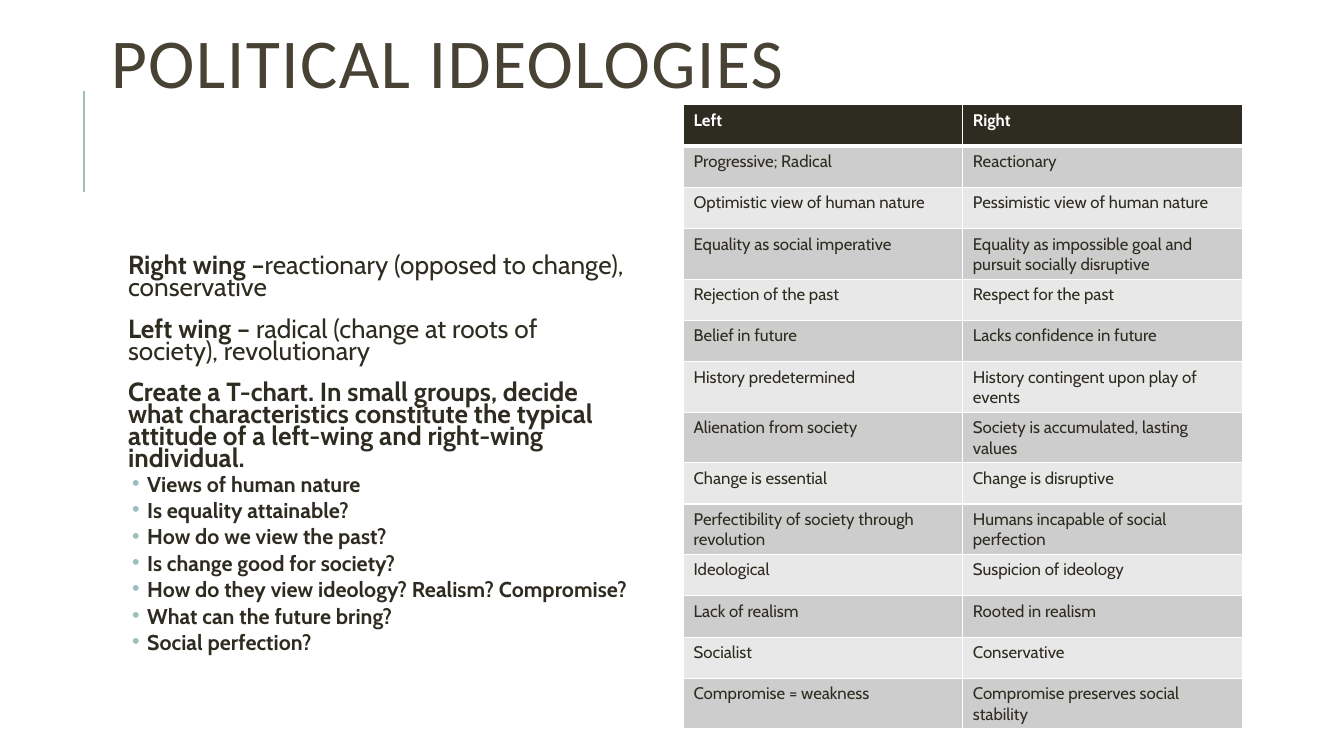
from dataclasses import dataclass

from lxml.etree import SubElement
from pptx import Presentation
from pptx.dml.color import RGBColor
from pptx.enum.shapes import MSO_CONNECTOR as Connector
from pptx.enum.text import MSO_ANCHOR as Anchor
from pptx.oxml import parse_xml
from pptx.oxml.ns import nsdecls, qn
from pptx.util import Inches, Pt


@dataclass(frozen=True)
class Theme:
    heading_font: str = "Calibri"
    body_font: str = "Cabin"
    heading: str = "474233"
    ink: str = "2E2B21"
    accent: str = "9CBEBD"
    white: str = "FFFFFF"
    bands: tuple = ("CDCDCD", "E8E8E8")
    title_size: float = 50
    lead_size: float = 18.7
    bullet_size: float = 15.3
    table_size: float = 12


LEADS = [
    [("Right wing –", True), ("reactionary (opposed to change), conservative", False)],
    [("Left wing – ", True), ("radical (change at roots of society), revolutionary", False)],
    [("Create a T-chart. In small groups, decide what characteristics constitute "
      "the typical attitude of a left-wing and right-wing individual.", True)],
]
QUESTIONS = [
    "Views of human nature",
    "Is equality attainable?",
    "How do we view the past?",
    "Is change good for society?",
    "How do they view ideology? Realism? Compromise?",
    "What can the future bring?",
    "Social perfection?",
]
ATTITUDES = [
    ("Left", "Right"),
    ("Progressive; Radical", "Reactionary"),
    ("Optimistic view of human nature", "Pessimistic view of human nature"),
    ("Equality as social imperative",
     "Equality as impossible goal and pursuit socially disruptive"),
    ("Rejection of the past", "Respect for the past"),
    ("Belief in future", "Lacks confidence in future"),
    ("History predetermined", "History contingent upon play of events"),
    ("Alienation from society", "Society is accumulated, lasting values"),
    ("Change is essential", "Change is disruptive"),
    ("Perfectibility of society through revolution",
     "Humans incapable of social perfection"),
    ("Ideological", "Suspicion of ideology"),
    ("Lack of realism", "Rooted in realism"),
    ("Socialist", "Conservative"),
    ("Compromise = weakness", "Compromise preserves social stability"),
]


class SlideBuilder:
    def __init__(self, slide, theme):
        self.slide = slide
        self.theme = theme

    def add_run(self, paragraph, text, size, color, font=None, bold=False):
        run = paragraph.add_run()
        run.text = text
        run.font.name = font or self.theme.body_font
        run.font.size = Pt(size)
        run.font.bold = bold
        run.font.color.rgb = RGBColor.from_string(color)
        return run

    def text_frame(self, left, top, width, height):
        box = self.slide.shapes.add_textbox(*map(Inches, (left, top, width, height)))
        box.text_frame.word_wrap = True
        return box.text_frame

    def accent_line(self, x, start, end):
        rule = self.slide.shapes.add_connector(
            Connector.STRAIGHT, Inches(x), Inches(start), Inches(x), Inches(end))
        rule.line.color.rgb = RGBColor.from_string(self.theme.accent)
        rule.line.width = Pt(1.5)
        SubElement(rule._element.spPr, qn("a:effectLst"))

    def title(self, text):
        frame = self.text_frame(1, 0.15, 11.32, 1.06)
        frame.vertical_anchor = Anchor.MIDDLE
        heading = frame.paragraphs[0]
        heading.line_spacing = 0.8
        run = self.add_run(heading, text, self.theme.title_size,
                           self.theme.heading, self.theme.heading_font)
        run.font._element.set("spc", "100")

    def discussion(self, leads, questions):
        frame = self.text_frame(1.12, 2.5, 5.2, 4.4)
        frame.margin_left = frame.margin_right = Inches(0.05)
        frame.margin_top = frame.margin_bottom = Inches(0.05)
        entries = [(lead, False) for lead in leads]
        entries += [([(question, True)], True) for question in questions]
        for index, (runs, bulleted) in enumerate(entries):
            paragraph = frame.add_paragraph() if index else frame.paragraphs[0]
            paragraph.line_spacing = 0.7
            paragraph.space_before = Pt(2 if bulleted else 12)
            paragraph.space_after = Pt(4 if bulleted else 2)
            size = self.theme.bullet_size if bulleted else self.theme.lead_size
            for text, bold in runs:
                self.add_run(paragraph, text, size, self.theme.ink, bold=bold)
            if bulleted:
                paragraph.level = 1
                self.bullet(paragraph)
            else:
                paragraph._p.get_or_add_pPr().set("marL", str(Inches(0.1)))

    def bullet(self, paragraph):
        props = paragraph._p.get_or_add_pPr()
        props.set("marL", str(Inches(0.29)))
        props.set("indent", str(Inches(-0.15)))
        color = SubElement(props, qn("a:buClr"))
        SubElement(color, qn("a:srgbClr"), val=self.theme.accent)
        SubElement(props, qn("a:buFont"), typeface="Arial")
        SubElement(props, qn("a:buChar"), char="•")

    def borders(self, cell, bottom):
        """Draw one-point white borders, with the given bottom width in points."""
        props = cell._tc.get_or_add_tcPr()
        widths = {"lnL": 1, "lnR": 1, "lnT": 1, "lnB": bottom}
        for position, (side, width) in enumerate(widths.items()):
            props.insert(position, parse_xml(
                f'<a:{side} {nsdecls("a")} w="{Pt(width)}"><a:solidFill>'
                f'<a:srgbClr val="{self.theme.white}"/></a:solidFill></a:{side}>'))

    def table(self, rows):
        column_width, row_height = 2.77, 0.41
        columns = len(rows[0])
        table = self.slide.shapes.add_table(
            len(rows), columns, Inches(6.78), Inches(1.04),
            Inches(column_width * columns), Inches(row_height * len(rows))).table
        table.horz_banding = False
        for column in table.columns:
            column.width = Inches(column_width)
        for row_index, texts in enumerate(rows):
            table.rows[row_index].height = Inches(row_height)
            header = row_index == 0
            fill = self.theme.ink if header else self.theme.bands[(row_index - 1) % 2]
            color = self.theme.white if header else self.theme.ink
            for column_index, text in enumerate(texts):
                cell = table.cell(row_index, column_index)
                cell.fill.solid()
                cell.fill.fore_color.rgb = RGBColor.from_string(fill)
                self.borders(cell, bottom=3 if header else 1)
                self.add_run(cell.text_frame.paragraphs[0], text,
                             self.theme.table_size, color, bold=header)


def main():
    deck = Presentation()
    deck.slide_width, deck.slide_height = Inches(13.33), Inches(7.5)
    builder = SlideBuilder(deck.slides.add_slide(deck.slide_layouts[6]), Theme())
    builder.accent_line(0.83, 1.9, 0.9)
    builder.title("POLITICAL IDEOLOGIES")
    builder.discussion(LEADS, QUESTIONS)
    builder.table(ATTITUDES)
    deck.save("out.pptx")


if __name__ == "__main__":
    main()
